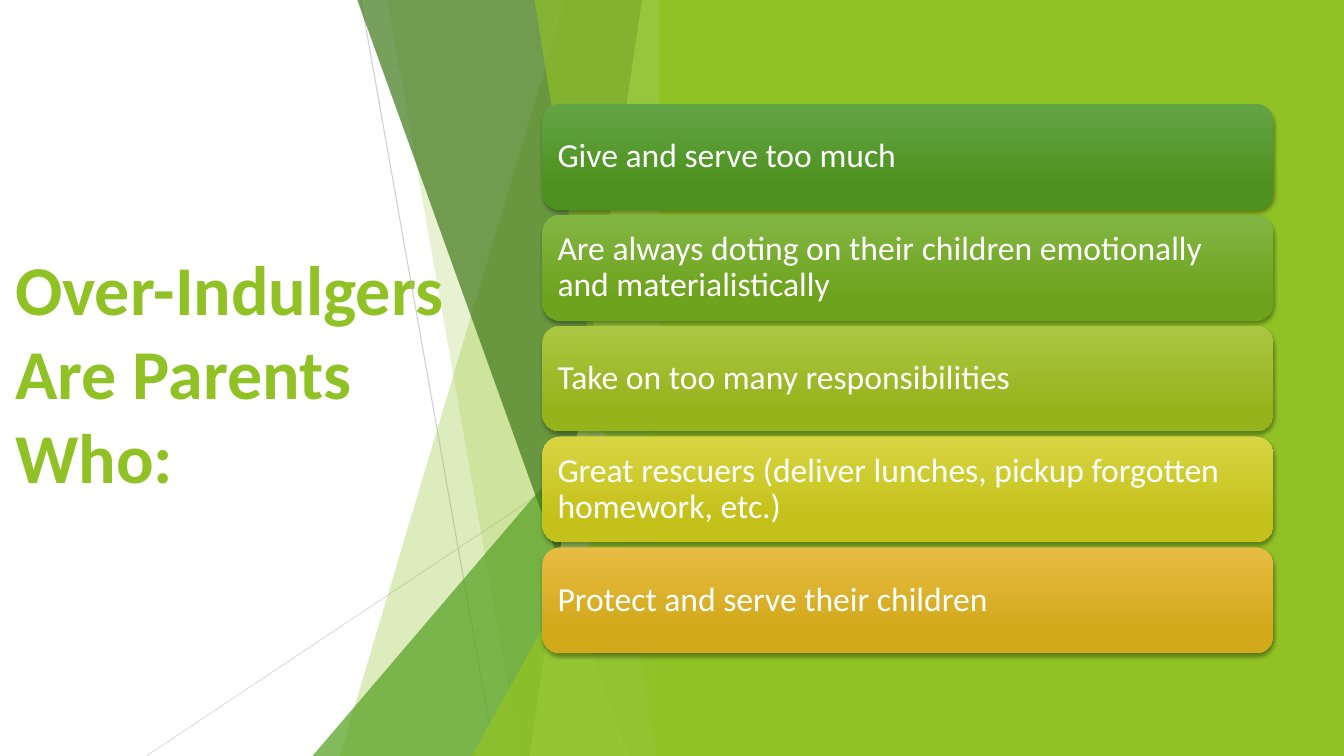
"""Build the slide on over-indulging parents."""
from dataclasses import dataclass

from lxml.etree import SubElement
from pptx import Presentation
from pptx.dml.color import RGBColor
from pptx.enum.shapes import MSO_CONNECTOR, MSO_SHAPE
from pptx.enum.text import MSO_ANCHOR, MSO_AUTO_SIZE, PP_ALIGN
from pptx.oxml.ns import qn
from pptx.util import Inches, Pt


@dataclass(frozen=True)
class Theme:
    font: str = "Calibri"
    title_size: int = 50
    card_size: int = 24
    lime: str = "90C226"
    green: str = "54A021"
    forest: str = "3F7819"
    pale: str = "C0E474"
    ray: str = "BFBFBF"
    low_ray: str = "D9D9D9"
    white: str = "FFFFFF"
    shadow: str = "000000"
    cards: tuple = (
        ("63A545", "4D921E"),
        ("82B644", "6EA31D"),
        ("AAC744", "97B31C"),
        ("D8D543", "C4C11A"),
        ("E7BC43", "D2A91B"),
    )


def write(frame, text, *, font, size, color, bold=False, spacing=1.0, inset=0.1):
    frame.word_wrap = True
    frame.auto_size = MSO_AUTO_SIZE.NONE
    frame.vertical_anchor = MSO_ANCHOR.MIDDLE
    frame.margin_left = frame.margin_right = Inches(inset)
    frame.text = text
    paragraph = frame.paragraphs[0]
    paragraph.alignment = PP_ALIGN.LEFT
    paragraph.line_spacing = spacing
    style = paragraph.runs[0].font
    style.name, style.size, style.bold = font, Pt(size), bold
    style.color.rgb = RGBColor.from_string(color)


def set_opacity(element, percent):
    for color in element.spPr.iter(qn("a:srgbClr")):
        SubElement(color, qn("a:alpha"), val=str(percent * 1000))


class SlideBuilder:
    def __init__(self, slide, theme):
        self.slide, self.shapes, self.theme = slide, slide.shapes, theme

    def title(self, text, left, top, width, height):
        heading = self.shapes.title
        heading.left, heading.top = Inches(left), Inches(top)
        heading.width, heading.height = Inches(width), Inches(height)
        write(heading.text_frame, text, font=self.theme.font, bold=True,
              size=self.theme.title_size, color=self.theme.lime)

    def ray(self, start, end, color, opacity):
        ray = self.shapes.add_connector(
            MSO_CONNECTOR.STRAIGHT, *map(Inches, start + end))
        ray.line.width = Pt(0.75)
        ray.line.color.rgb = RGBColor.from_string(color)
        set_opacity(ray._element, opacity)
        SubElement(ray._element.spPr, qn("a:effectLst"))

    def paint(self, shape, color, opacity=100):
        shape.shadow.inherit = False
        shape.fill.solid()
        shape.fill.fore_color.rgb = RGBColor.from_string(color)
        shape.line.fill.background()
        set_opacity(shape._element, opacity)

    def facet(self, top_x, bottom_x, right, color, opacity):
        top, bottom = Inches(-0.01), Inches(7.5)
        outline = self.shapes.build_freeform(Inches(top_x), top)
        outline.add_line_segments([
            (Inches(right), top), (Inches(right), bottom), (Inches(bottom_x), bottom)])
        self.paint(outline.convert_to_shape(), color, opacity)

    def corner(self, left, top, right, color, opacity):
        corner = self.shapes.add_shape(
            MSO_SHAPE.ISOSCELES_TRIANGLE, Inches(left), Inches(top),
            Inches(right - left), Inches(7.5 - top))
        corner.adjustments[0] = 1
        self.paint(corner, color, opacity)

    def panel(self, left, width):
        panel = self.shapes.add_shape(
            MSO_SHAPE.RECTANGLE, Inches(left), 0, Inches(width), Inches(7.5))
        self.paint(panel, self.theme.lime)

    def card(self, text, top, shades):
        card = self.shapes.add_shape(
            MSO_SHAPE.ROUNDED_RECTANGLE, Inches(5.38), Inches(top),
            Inches(7.25), Inches(1.05))
        card.fill.gradient()
        card.fill.gradient_angle = 270
        for stop, shade, position in zip(card.fill.gradient_stops, shades, (0, 0.78)):
            stop.color.rgb = RGBColor.from_string(shade)
            stop.position = position
        card.line.fill.background()
        card.shadow.inherit = False
        effects = card._element.spPr.find(qn("a:effectLst"))
        shadow = SubElement(effects, qn("a:outerShdw"), blurRad=str(Pt(3)),
                            dist=str(Pt(2)), dir="5400000", rotWithShape="0")
        color = SubElement(shadow, qn("a:srgbClr"), val=self.theme.shadow)
        SubElement(color, qn("a:alpha"), val="35000")
        write(card.text_frame, text, font=self.theme.font, size=self.theme.card_size,
              color=self.theme.white, spacing=0.9)


def main():
    theme = Theme()
    deck = Presentation()
    deck.slide_width, deck.slide_height = Inches(13.33), Inches(7.5)
    builder = SlideBuilder(deck.slides.add_slide(deck.slide_layouts[5]), theme)

    builder.title("Over-Indulgers Are Parents Who:", 0.05, 2.2, 4.55, 2.97)

    edge = 6.66
    builder.ray((3.58, 0), (4.91, 7.5), theme.ray, 75)
    builder.ray((edge, 4.03), (1.45, 7.5), theme.low_ray, 80)
    builder.facet(5.61, 3.37, edge, theme.lime, 30)
    builder.facet(3.84, 5.16, edge, theme.lime, 20)
    builder.corner(3.1, 3.33, edge, theme.green, 72)
    builder.facet(3.54, 6.24, edge, theme.forest, 70)
    builder.facet(6.37, 5.25, edge, theme.pale, 70)
    builder.facet(5.3, 6.51, edge, theme.lime, 65)
    builder.corner(4.68, 3.93, edge, theme.lime, 80)
    builder.panel(6.54, 6.79)

    habits = (
        "Give and serve too much",
        "Are always doting on their children emotionally and materialistically",
        "Take on too many responsibilities",
        "Great rescuers (deliver lunches, pickup forgotten homework, etc.)",
        "Protect and serve their children",
    )
    for row, (habit, shades) in enumerate(zip(habits, theme.cards)):
        builder.card(habit, 1.03 + 1.1 * row, shades)

    deck.save("out.pptx")


if __name__ == "__main__":
    main()
